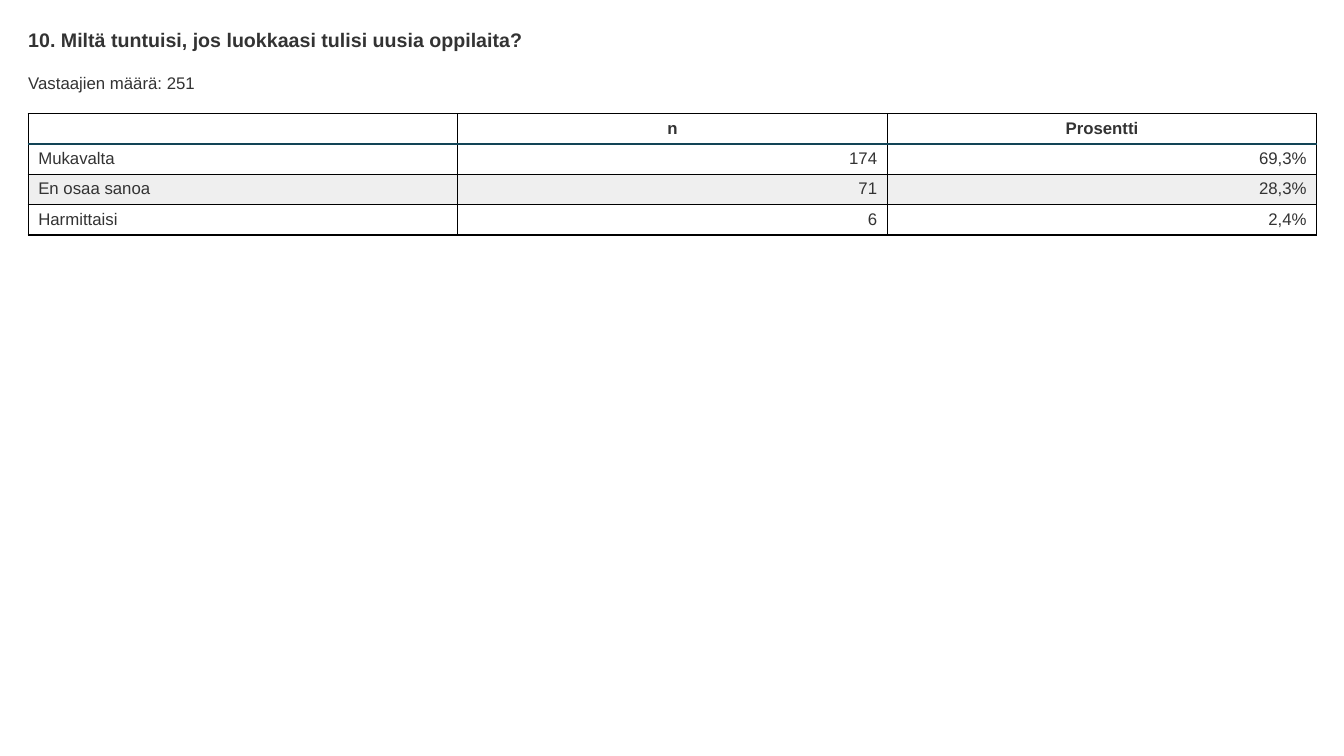
from dataclasses import dataclass

from lxml import etree
from pptx import Presentation
from pptx import util as u
from pptx.dml.color import RGBColor
from pptx.enum import text
from pptx.oxml.ns import qn

FONT, INK, BLACK, TEAL = "Arial", "333333", "000000", "124456"
WHITE, BAND = "FFFFFF", "EFEFEF"
LEFT, WIDTH, ROW_HEIGHT = 0.28, 12.78, 0.3
ALIGN = text.PP_ALIGN


@dataclass
class Line:
    text: str
    top: float
    height: float
    size: int
    bold: bool = False


@dataclass
class Answer:
    label: str
    count: str
    percent: str
    fill: str = WHITE


LINES = [
    Line("10. Miltä tuntuisi, jos luokkaasi tulisi uusia oppilaita?", 0.28, 0.23, 14, True),
    Line("Vastaajien määrä: 251", 0.72, 0.2, 12),
]
ROWS = [
    Answer("", "n", "Prosentti"),
    Answer("Mukavalta", "174", "69,3%"),
    Answer("En osaa sanoa", "71", "28,3%", BAND),
    Answer("Harmittaisi", "6", "2,4%"),
]


def rgb(color: str) -> RGBColor:
    return RGBColor.from_string(color)


def write(tf, content: str, *, size: int = 12, bold: bool = False, align=ALIGN.LEFT) -> None:
    p = tf.paragraphs[0]
    p.alignment = align
    if not content:
        # The end mark sets the line height of an empty cell.
        etree.SubElement(p._p, qn("a:endParaRPr"), sz=str(size * 100))
        return
    r = p.add_run()
    r.text = content
    r.font.name, r.font.size, r.font.bold = FONT, u.Pt(size), bold
    r.font.color.rgb = rgb(INK)


def add_border(cell, side: str, color: str, width: float) -> None:
    ln = etree.SubElement(cell._tc.get_or_add_tcPr(), qn(f"a:ln{side}"), w=str(u.Pt(width)))
    fill = etree.SubElement(ln, qn("a:solidFill"))
    etree.SubElement(fill, qn("a:srgbClr"), val=color)


def add_line(s, line: Line) -> None:
    box = s.shapes.add_textbox(u.Inches(LEFT), u.Inches(line.top),
                               u.Inches(WIDTH), u.Inches(line.height))
    tf = box.text_frame
    tf.word_wrap = True
    tf.auto_size = text.MSO_AUTO_SIZE.SHAPE_TO_FIT_TEXT
    tf.margin_left = tf.margin_right = tf.margin_top = tf.margin_bottom = 0
    write(tf, line.text, size=line.size, bold=line.bold)


def add_answers(s, answers: list[Answer]) -> None:
    table = s.shapes.add_table(len(answers), 3, u.Inches(LEFT), u.Inches(1.13), u.Inches(WIDTH),
                               u.Inches(ROW_HEIGHT * len(answers))).table
    table.first_row = table.horz_banding = False
    for row, answer in enumerate(answers):
        header = row == 0
        number_align = ALIGN.CENTER if header else ALIGN.RIGHT
        for col, content in enumerate((answer.label, answer.count, answer.percent)):
            cell = table.cell(row, col)
            write(cell.text_frame, content, bold=header,
                  align=number_align if col else ALIGN.LEFT)
            for side in "LRTB":
                under_header = (row, side) in ((0, "B"), (1, "T"))
                add_border(cell, side, *((TEAL, 2) if under_header else (BLACK, 1)))
            cell.fill.solid()
            cell.fill.fore_color.rgb = rgb(answer.fill)


def main() -> None:
    prs = Presentation()
    prs.slide_width, prs.slide_height = u.Inches(13.33), u.Inches(7.5)
    s = prs.slides.add_slide(prs.slide_layouts[6])
    for line in LINES:
        add_line(s, line)
    add_answers(s, ROWS)
    prs.save("out.pptx")


if __name__ == "__main__":
    main()
